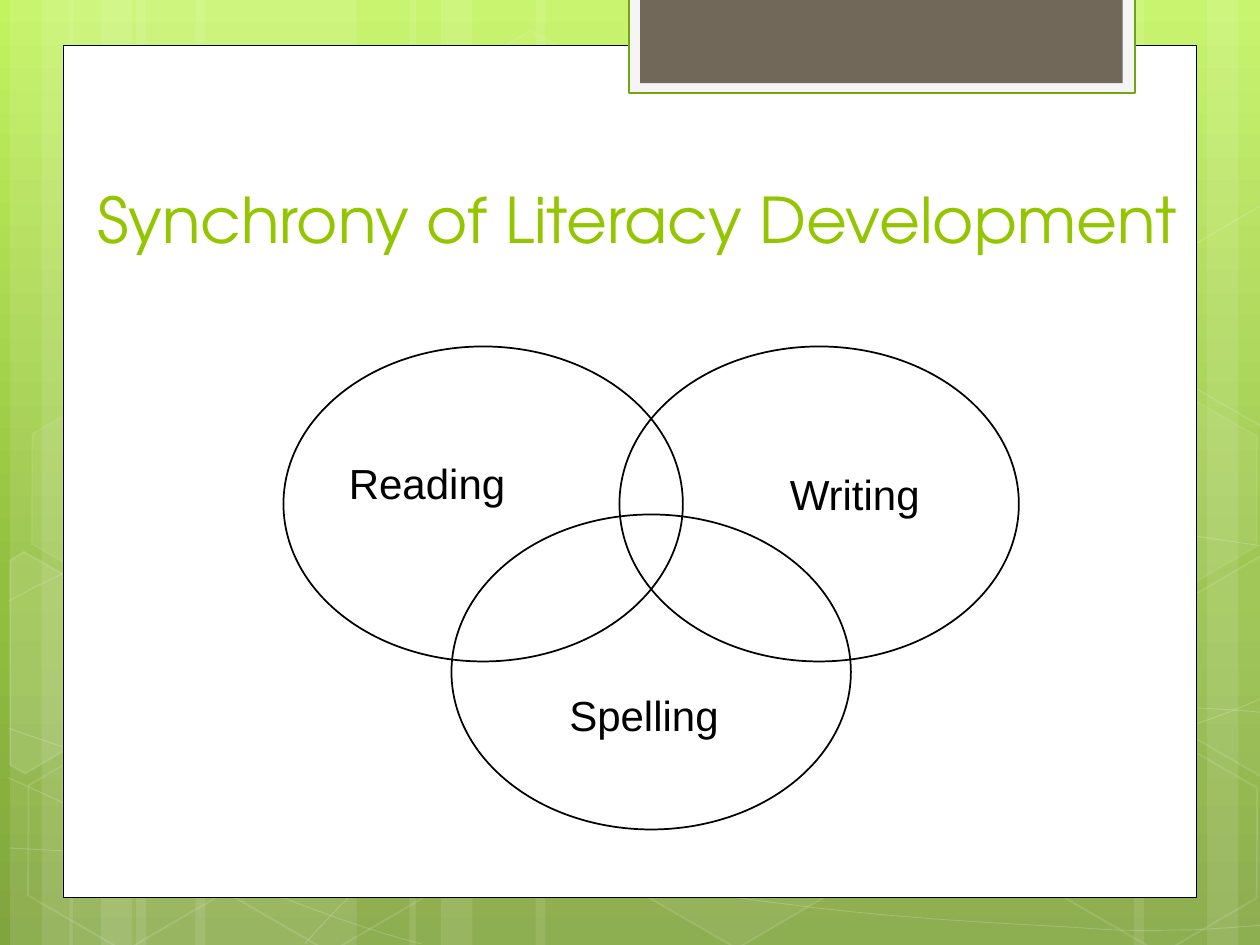
from copy import deepcopy
from dataclasses import dataclass
from pptx import Presentation
from pptx.dml.color import RGBColor
from pptx.enum.shapes import MSO_SHAPE
from pptx.enum.text import MSO_ANCHOR, PP_ALIGN
from pptx.oxml.ns import qn
from pptx.util import Inches, Pt


@dataclass(frozen=True)
class Theme:
    white: str = "FFFFFF"
    ink: str = "000000"
    title: str = "94C600"
    tab: str = "71685A"
    tab_frame: str = "F5F5F5"
    tab_line: str = "74A510"
    title_font: str = "TeX Gyre Adventor"
    label_font: str = "Arial"
    title_size: int = 36
    label_size: int = 24


T = Theme()
W, H = 10, 7.5
TITLE = "Synchrony of Literacy Development"
GRADIENT = [(0, "C3F35F"), (0.62, "93BF3F"), (1, "81A53E")]

BARS = [(1.08, 1.75), (0.08, 0.5), (0.33, 0.83), (1.55, 1.75), (0.55, 0.5), (0.8, 0.83),
        (7.33, 1.75), (9.58, 0.5), (9, 0.83), (4.25, 3.08), (3.25, 0.5), (3.5, 0.83)]

WAVES = [
    [(0.07, 6.73), (0.61, 6.76), (1.15, 6.79), (1.9, 6.78), (2.65, 6.77), (3.58, 6.75),
     (4.58, 6.65), (5.58, 6.55), (7, 6.36), (7.92, 6.17), (8.83, 5.98), (9.77, 5.68), (10.07, 5.51)],
    [(0.07, 4.77), (0.36, 4.61), (0.65, 4.46), (1.21, 4.31), (1.78, 4.16), (2.59, 3.94),
     (3.47, 3.87), (4.36, 3.8), (5.44, 3.79), (6.54, 3.87), (7.64, 3.95), (9.47, 4.26), (10.07, 4.34)],
    [(0.06, 6.17), (1.27, 6.72), (2.47, 7.27), (3.34, 7.49)],
    [(0.07, 5.78), (0.38, 5.89), (0.7, 6), (1.28, 6.16), (1.86, 6.31), (2.73, 6.56),
     (3.57, 6.73), (4.4, 6.9), (5.45, 7.08), (6.28, 7.18), (7.11, 7.29), (8, 7.33),
     (8.53, 7.36), (9.05, 7.4), (9.19, 7.38), (9.45, 7.38), (9.71, 7.37), (9.89, 7.35), (10.07, 7.34)],
    [(2.42, 7.49), (2.6, 7.29), (2.78, 7.09), (3.02, 6.91), (3.26, 6.73), (3.6, 6.53),
     (3.88, 6.39), (4.16, 6.25), (4.33, 6.19), (4.7, 6.09), (5.06, 5.99), (5.73, 5.85),
     (6.08, 5.78), (6.44, 5.71), (6.49, 5.71), (6.8, 5.69), (7.11, 5.66), (7.6, 5.63),
     (7.94, 5.62), (8.29, 5.61), (8.86, 5.62), (8.86, 5.62), (9.08, 5.62), (9.31, 5.62),
     (9.53, 5.62), (9.71, 5.63), (9.88, 5.64), (9.97, 5.65), (10.06, 5.66), (10.03, 5.65),
     (10.06, 5.66)],
]

HEXAGONS = [(3.34, 0.36, 4, 8), (4.97, 5.89, 6, 12), (0.11, 5.91, 0, 12),
            (0.14, 3.12, 7, 8), (1.74, 5.92, 0, 12), (7.53, 4.53, 10, 12),
            (8.34, 5.93, 0, 12), (8.34, 3.14, 7, 8)]

CUT_HEXAGONS = [
    ([(0.08, 4.45), (0.19, 4.38), (0.96, 4.82), (0.95, 5.7), (0.2, 6.14), (0.08, 6.07)], 10),
    ([(9.26, 4.85), (10.01, 4.41), (10.09, 4.46), (10.09, 6.13), (10.02, 6.17), (9.26, 5.73)], 4),
    ([(9.26, 2.07), (10.01, 1.63), (10.1, 1.68), (10.09, 3.35), (10.02, 3.39), (9.26, 2.95)], 0),
]

PANELS = [((0.5, 0.36, 9, 6.76), T.white, T.ink, 0.5),
          ((4.99, -0.02, 4.02, 0.76), T.tab_frame, T.tab_line, 1.25),
          ((5.08, -0.02, 3.83, 0.68), T.tab, None, 0)]

CIRCLE_W, CIRCLE_H, STEP = 3.17, 2.5, 4 / 3
CIRCLE_X, CIRCLE_Y = 2.25, 2.75
VENN = [("Reading", 0, 0, (2.67, 3.58, 1.83, 0.5)),
        ("Writing", 2, 0, (6.17, 3.67, 1.5, 0.5)),
        ("Spelling", 1, 1, (4.42, 5.42, 1.67, 0.5))]


def set_alpha(fill, percent):
    for clr in fill._xPr.iter(qn("a:srgbClr")):
        clr.append(clr.makeelement(qn("a:alpha"), {"val": str(percent * 1000)}))


def style(sp, fill=None, line=None, width=1, fill_alpha=100, line_alpha=100):
    sp.shadow.inherit = False
    for target, color, alpha in ((sp.fill, fill, fill_alpha), (sp.line.fill, line, line_alpha)):
        if color and alpha:
            target.solid()
            target.fore_color.rgb = RGBColor.from_string(color)
            if alpha < 100:
                set_alpha(target, alpha)
        else:
            target.background()
    if line:
        sp.line.width = Pt(width)


def add_shape(s, kind, box, **look):
    sp = s.shapes.add_shape(kind, *map(Inches, box))
    style(sp, **look)
    return sp


def add_outline(s, points, close, **look):
    points = [(Inches(x), Inches(y)) for x, y in points]
    fb = s.shapes.build_freeform(*points[0])
    fb.add_line_segments(points[1:], close=close)
    sp = fb.convert_to_shape()
    style(sp, **look)
    return sp


def bend(sp):
    lines = list(sp._element.iter(qn("a:lnTo")))
    for i in range(0, len(lines), 3):
        first, *others = lines[i:i + 3]
        curve = first.makeelement(qn("a:cubicBezTo"), {})
        first.addprevious(curve)
        for line in (first, *others):
            curve.append(line[0])
            line.getparent().remove(line)


def set_text(tf, text, font, size, color):
    tf.word_wrap = True
    tf.text = text
    p = tf.paragraphs[0]
    p.alignment = PP_ALIGN.LEFT
    p.font.name, p.font.size = font, Pt(size)
    p.font.color.rgb = RGBColor.from_string(color)


def paint_background(s):
    fill = s.background.fill
    fill.gradient()
    fill.gradient_angle = 270
    stops = s._element.find(".//" + qn("a:gsLst"))
    stops.append(deepcopy(stops[-1]))
    for stop, (position, color) in zip(fill.gradient_stops, GRADIENT):
        stop.position = position
        stop.color.rgb = RGBColor.from_string(color)


def draw_decor(s):
    for x, w in BARS:
        add_shape(s, MSO_SHAPE.RECTANGLE, (x, 0, w, H), fill=T.white, fill_alpha=10)
    for knots in WAVES:
        bend(add_outline(s, knots, False, line=T.white, width=0.5, line_alpha=20))
    for x, y, fill_alpha, line_alpha in HEXAGONS:
        sp = add_shape(s, MSO_SHAPE.HEXAGON, (x, y, 1.75, 1.52), fill=T.white, line=T.white,
                       fill_alpha=fill_alpha, line_alpha=line_alpha)
        sp.adjustments[0] = 0.285
        sp.rotation = 30
    for points, fill_alpha in CUT_HEXAGONS:
        add_outline(s, points, True, fill=T.white, line=T.white,
                    fill_alpha=fill_alpha, line_alpha=12)
    for box, fill, line, width in PANELS:
        add_shape(s, MSO_SHAPE.RECTANGLE, box, fill=fill, line=line, width=width)


def draw_title(s):
    title = s.shapes.title
    title.left, title.top, title.width, title.height = map(Inches, (0.67, 0.83, 9.17, 1.25))
    set_text(title.text_frame, TITLE, T.title_font, T.title_size, T.title)
    title.text_frame.vertical_anchor = MSO_ANCHOR.BOTTOM
    s.shapes._spTree.append(title._element)


def draw_venn(s):
    for _, col, row, _ in VENN:
        box = (CIRCLE_X + col * STEP, CIRCLE_Y + row * STEP, CIRCLE_W, CIRCLE_H)
        add_shape(s, MSO_SHAPE.OVAL, box, line=T.ink)
    for text, _, _, box in VENN:
        tb = s.shapes.add_textbox(*map(Inches, box))
        set_text(tb.text_frame, text, T.label_font, T.label_size, T.ink)


def main():
    prs = Presentation()
    prs.slide_width, prs.slide_height = Inches(W), Inches(H)
    s = prs.slides.add_slide(prs.slide_layouts[5])
    paint_background(s)
    draw_decor(s)
    draw_title(s)
    draw_venn(s)
    prs.save("out.pptx")


if __name__ == "__main__":
    main()
